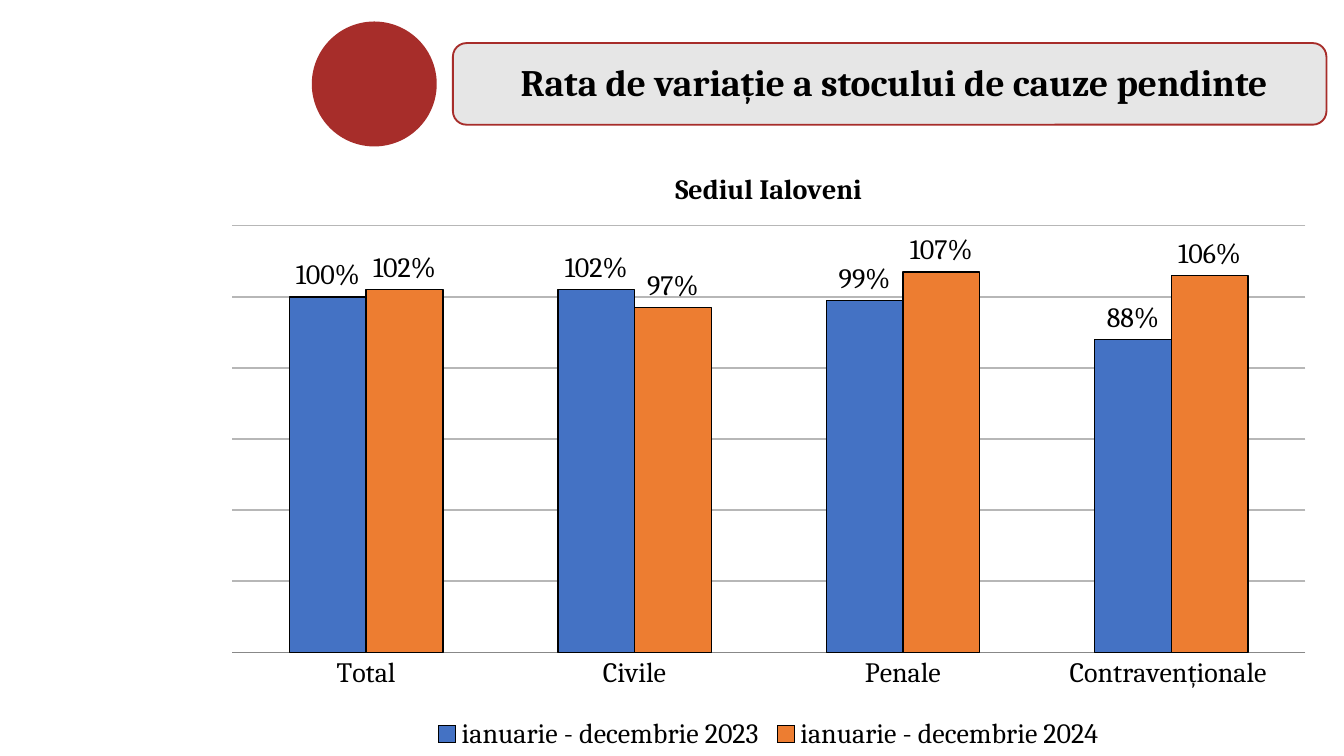
from lxml.etree import SubElement
from pptx import Presentation
from pptx.chart.data import CategoryChartData
from pptx.dml.color import RGBColor
from pptx.enum.chart import XL_CHART_TYPE, XL_LABEL_POSITION, XL_LEGEND_POSITION, XL_TICK_LABEL_POSITION, XL_TICK_MARK
from pptx.enum.shapes import MSO_SHAPE
from pptx.enum.text import MSO_ANCHOR, PP_ALIGN
from pptx.oxml.ns import qn
from pptx.util import Inches, Pt

FONT = "Cambria"
RED, BLACK = "A72D2A", "000000"


def color(value):
    return RGBColor.from_string(value)


def style(font, size, bold=False):
    font.name, font.size, font.bold = FONT, Pt(size), bold
    font.color.rgb = color(BLACK)


prs = Presentation()
prs.slide_width = Inches(10)
prs.slide_height = prs.slide_width * 9 // 16
W, H = prs.slide_width / 100, prs.slide_height / 100  # one percent of the slide
s = prs.slides.add_slide(prs.slide_layouts[6])

# Header: red disc and rounded title bar
for kind, left, top, width, height, fill in (
    (MSO_SHAPE.OVAL, 23.2, 2.85, 9.3, 16.53, RED),
    (MSO_SHAPE.ROUNDED_RECTANGLE, 33.7, 5.7, 65, 10.8, "E6E6E6"),
):
    sp = s.shapes.add_shape(kind, int(left * W), int(top * H), int(width * W), int(height * H))
    sp.shadow.inherit = False
    sp.fill.solid()
    sp.fill.fore_color.rgb = color(fill)
    sp.line.color.rgb = color(RED)
    sp.line.width = Pt(1)
    if kind == MSO_SHAPE.OVAL:
        sp.line.fill.background()

# Slide title
title = s.shapes.add_textbox(int(33.1 * W), int(7.6 * H), int(66.9 * W), int(7.1 * H))
tf = title.text_frame
tf.word_wrap = True
tf.vertical_anchor = MSO_ANCHOR.MIDDLE
tf.text = "Rata de variație a stocului de cauze pendinte"
p = tf.paragraphs[0]
p.alignment, p.line_spacing = PP_ALIGN.CENTER, 0.9
style(p.runs[0].font, 20, bold=True)

# Chart data
data = CategoryChartData(number_format="0%")
data.categories = ["Total", "Civile", "Penale", "Contravenționale "]
data.add_series("ianuarie - decembrie 2023", (1, 1.02, 0.99, 0.88))
data.add_series("ianuarie - decembrie 2024", (1.02, 0.97, 1.07, 1.06))
chart = s.shapes.add_chart(
    XL_CHART_TYPE.COLUMN_CLUSTERED,
    int(15.6 * W), int(19.4 * H), int(83.2 * W), int(80.6 * H), data,
).chart
style(chart.font, 15)

# Chart title and legend
tf = chart.chart_title.text_frame
tf.text = "Sediul Ialoveni"
style(tf.paragraphs[0].runs[0].font, 15, bold=True)
chart.chart_title.include_in_layout = False
chart.has_legend = True
chart.legend.position = XL_LEGEND_POSITION.BOTTOM
chart.legend.include_in_layout = False

# Axes
axis = chart.value_axis
axis.minimum_scale, axis.maximum_scale, axis.major_unit = 0, 1.2, 0.2
axis.visible = False
axis.tick_label_position = XL_TICK_LABEL_POSITION.NONE
axis.major_gridlines.format.line.color.rgb = color("B7B7B7")
axis.major_gridlines.format.line.width = Pt(0.75)
axis = chart.category_axis
axis.major_tick_mark = XL_TICK_MARK.NONE
axis.format.line.color.rgb = color("888888")
axis.format.line.width = Pt(0.75)

# Columns and their labels
plot = chart.plots[0]
plot.gap_width, plot.overlap, plot.vary_by_categories = 150, 0, False
for series, fill in zip(plot.series, ("4472C4", "ED7D31")):
    series.format.fill.solid()
    series.format.fill.fore_color.rgb = color(fill)
    series.format.line.color.rgb = color(BLACK)
    series.format.line.width = Pt(0.75)
    labels = series.data_labels
    labels.show_value = True
    labels.number_format, labels.number_format_is_linked = "0%", False
    labels.position = XL_LABEL_POSITION.OUTSIDE_END
    style(labels.font, 15)

# Plot area as shares of the chart
area = plot._element.getparent()
layout = area.find(qn("c:layout"))
if layout is None:
    layout = SubElement(area, qn("c:layout"))
    area.insert(0, layout)
manual = SubElement(layout, qn("c:manualLayout"))
for tag, value in (
    ("layoutTarget", "inner"), ("xMode", "edge"), ("yMode", "edge"),
    ("x", "0.02"), ("y", "0.13"), ("w", "0.96"), ("h", "0.7"),
):
    SubElement(manual, qn("c:" + tag)).set("val", value)

prs.save("out.pptx")
